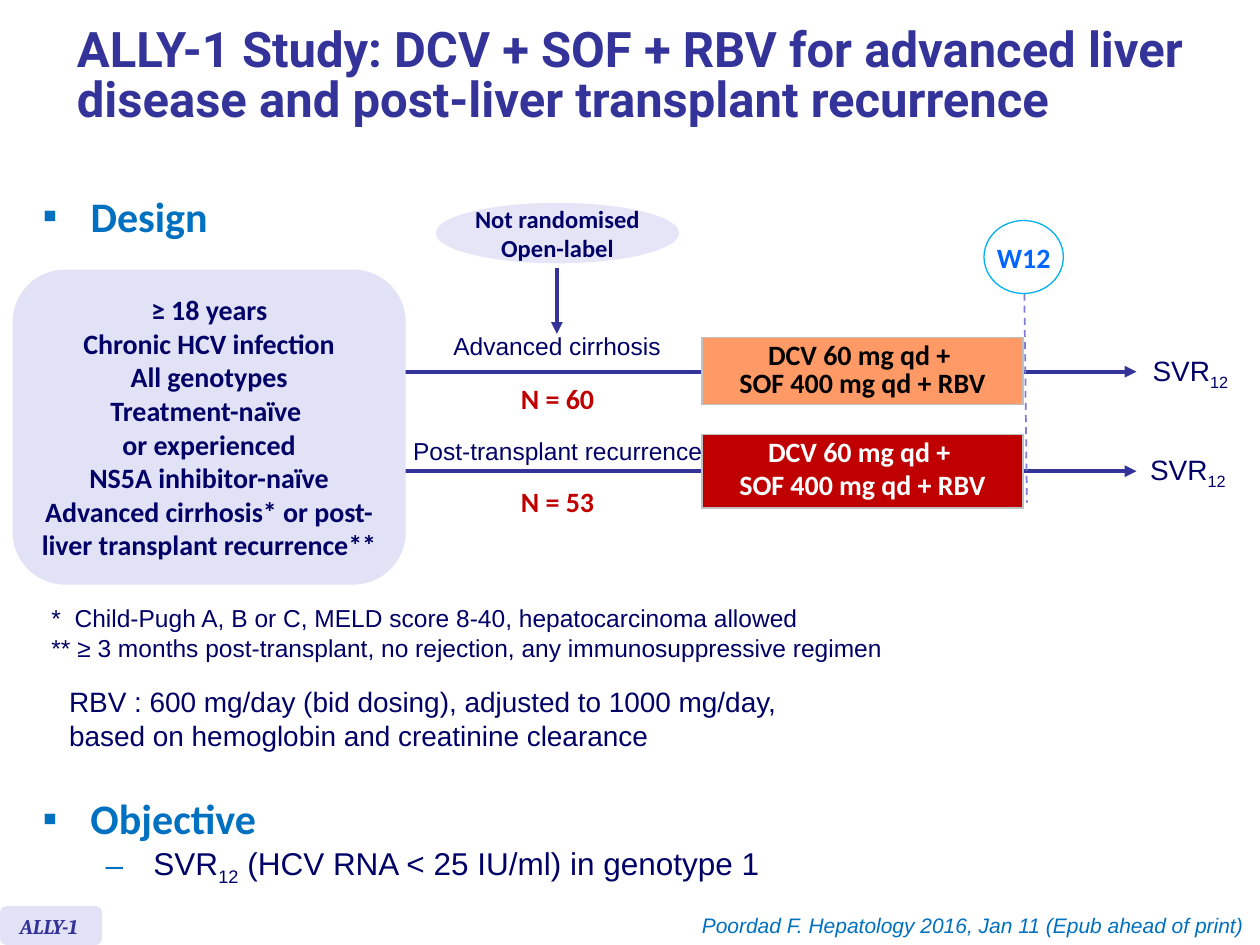
from lxml.etree import SubElement
from pptx import Presentation
from pptx.dml.color import RGBColor
from pptx.enum.dml import MSO_LINE
from pptx.enum.shapes import MSO_CONNECTOR, MSO_SHAPE
from pptx.enum.text import MSO_ANCHOR, PP_ALIGN
from pptx.oxml.ns import qn
from pptx.util import Inches, Pt

INDIGO = RGBColor(0x33, 0x33, 0x99)
NAVY = RGBColor(0x00, 0x00, 0x66)
BLUE = RGBColor(0x00, 0x70, 0xC0)
BRIGHT = RGBColor(0x00, 0x66, 0xFF)
CYAN = RGBColor(0x00, 0xB0, 0xF0)
DASH = RGBColor(0x7E, 0x7E, 0xD4)
LAVENDER = RGBColor(0xE2, 0xE2, 0xF6)
PALE = RGBColor(0xE5, 0xE5, 0xF7)
ORANGE = RGBColor(0xFF, 0x99, 0x66)
RED = RGBColor(0xC0, 0x00, 0x00)
BLACK = RGBColor(0, 0, 0)
WHITE = RGBColor(0xFF, 0xFF, 0xFF)

# Content: a line is a string, or a tuple whose every second part is subscript
TITLE = ("ALLY-1 Study: DCV + SOF + RBV for advanced liver disease "
         "and post-liver transplant recurrence")
SVR = ("SVR", "12")
CRITERIA = ["≥ 18 years", "Chronic HCV infection", "All genotypes",
            "Treatment-naïve ", "or experienced", "NS5A inhibitor-naïve",
            "Advanced cirrhosis* or post-", "liver transplant recurrence**"]
FOOTNOTES = ["*  Child-Pugh A, B or C, MELD score 8-40, hepatocarcinoma allowed",
             "** ≥ 3 months post-transplant, no rejection, any immunosuppressive regimen"]
DOSING = ["RBV : 600 mg/day (bid dosing), adjusted to 1000 mg/day,",
          "based on hemoglobin and creatinine clearance"]
OBJECTIVE = ("SVR", "12", " (HCV RNA < 25 IU/ml) in genotype 1")

ARMS = [
    dict(y=2.95, name="Advanced cirrhosis", name_at=(3.5, 2.58, 1.86, 0.34),
         size="N = 60", size_top=2.98, svr_at=(9.05, 2.76, 0.83, 0.37),
         drugs=["DCV 60 mg qd + \vSOF 400 mg qd + RBV"],
         top=2.68, height=0.53, fill=ORANGE, color=BLACK),
    dict(y=3.74, name="Post-transplant recurrence", name_at=(3.18, 3.41, 2.52, 0.34),
         size="N = 53", size_top=3.8, svr_at=(9.03, 3.54, 0.83, 0.37),
         drugs=["DCV 60 mg qd + ", "SOF 400 mg qd + RBV"],
         top=3.45, height=0.58, fill=RED, color=WHITE),
]

deck = Presentation()
deck.slide_width, deck.slide_height = Inches(10), Inches(7.5)
page = deck.slides.add_slide(deck.slide_layouts[5])


def set_font(para, size, color, face="Arial", bold=False, italic=False):
    font = para.font
    font.size, font.name, font.bold, font.italic = Pt(size), face, bold, italic
    font.color.rgb = color


def write(frame, lines, size, color, align=PP_ALIGN.LEFT, gap=0, **style):
    for index, line in enumerate(lines):
        para = frame.paragraphs[0] if index == 0 else frame.add_paragraph()
        para.alignment = align
        if index and gap:
            para.space_before = Pt(gap)
        if isinstance(line, str):
            para.text = line
        else:
            for part, text in enumerate(line):
                span = para.add_run()
                span.text = text
                if part % 2:
                    span.font._element.set("baseline", "-25000")
        set_font(para, size, color, **style)


def add_text(at, lines, size, color, wrap=False, **style):
    box = page.shapes.add_textbox(*map(Inches, at))
    box.text_frame.word_wrap = wrap
    write(box.text_frame, lines, size, color, **style)
    return box.text_frame


def add_panel(kind, at, fill, line=None):
    panel = page.shapes.add_shape(kind, *map(Inches, at))
    panel.shadow.inherit = False
    panel.fill.solid()
    panel.fill.fore_color.rgb = fill
    if line is None:
        panel.line.fill.background()
    else:
        panel.line.color.rgb = line
        panel.line.width = Pt(0.75)
    panel.text_frame.word_wrap = False
    panel.text_frame.vertical_anchor = MSO_ANCHOR.MIDDLE
    return panel


def add_line(x1, y1, x2, y2, color=INDIGO, width=2.25, arrow=True):
    line = page.shapes.add_connector(MSO_CONNECTOR.STRAIGHT,
                                     *map(Inches, (x1, y1, x2, y2)))
    line.line.color.rgb = color
    line.line.width = Pt(width)
    if arrow:
        SubElement(line.line._get_or_add_ln(), qn("a:tailEnd"), type="triangle")
    else:
        line.line.dash_style = MSO_LINE.DASH
    SubElement(line._element.spPr, qn("a:effectLst"))


def add_bullet(para, mark, left):
    props = para._p.get_or_add_pPr()
    props.set("marL", str(Inches(left)))
    props.set("indent", str(Inches(-0.38)))
    color = SubElement(props, qn("a:buClr"))
    SubElement(color, qn("a:srgbClr"), val=str(BLUE))
    SubElement(props, qn("a:buFont"), typeface="Arial")
    SubElement(props, qn("a:buChar"), char=mark)


def add_heading(at, heading, detail=None):
    box = page.shapes.add_textbox(*map(Inches, at))
    box.text_frame.word_wrap = True
    para = box.text_frame.paragraphs[0]
    add_bullet(para, "▪", 0.38)
    write(box.text_frame, [heading], 24, BLUE, face="Calibri", bold=True)
    if detail:
        para = box.text_frame.add_paragraph()
        para.level = 1
        add_bullet(para, "–", 0.88)
        para.space_before = Pt(0.7)
        for part, text in enumerate(detail):
            span = para.add_run()
            span.text = text
            if part % 2:
                span.font._element.set("baseline", "-25000")
        set_font(para, 18, NAVY)


def add_treatment(arm):
    at = (5.57, arm["top"], 2.55, arm["height"])
    table = page.shapes.add_table(1, 1, *map(Inches, at)).table
    table.first_row = table.horz_banding = False
    cell = table.cell(0, 0)
    cell.vertical_anchor = MSO_ANCHOR.MIDDLE
    write(cell.text_frame, arm["drugs"], 16, arm["color"], PP_ALIGN.CENTER,
          gap=3.2, face="Calibri", bold=True)
    for para in cell.text_frame.paragraphs:
        para.line_spacing = 0.8
    props = cell._tc.get_or_add_tcPr()
    for side in ("lnL", "lnR", "lnT", "lnB"):
        border = SubElement(props, qn("a:" + side), w=str(Pt(1)))
        SubElement(SubElement(border, qn("a:solidFill")), qn("a:srgbClr"), val="C0C0C0")
    cell.fill.solid()
    cell.fill.fore_color.rgb = arm["fill"]


# Title
title = page.shapes.title
title.left, title.top, title.width, title.height = map(Inches, (0.51, 0.08, 9.49, 1.07))
title.text_frame.word_wrap = True
title.text_frame.vertical_anchor = MSO_ANCHOR.MIDDLE
write(title.text_frame, [TITLE], 28, INDIGO, face="Roboto", bold=True)
title.text_frame.paragraphs[0].line_spacing = 0.85

# Headings
add_heading((0.24, 1.46, 1.98, 0.63), "Design")
add_heading((0.24, 6.24, 7.04, 0.81), "Objective", OBJECTIVE)

# Study arms
for arm in ARMS:
    add_line(3.19, arm["y"], 9.02, arm["y"])
    add_treatment(arm)
    add_text(arm["name_at"], [arm["name"]], 14, NAVY)
    add_text((4.03, arm["size_top"], 0.79, 0.37), [arm["size"]], 16, RED,
             align=PP_ALIGN.CENTER, face="Calibri", bold=True)
    add_text(arm["svr_at"], [SVR], 16, NAVY)

# Inclusion criteria
criteria = add_panel(MSO_SHAPE.ROUNDED_RECTANGLE, (0.1, 2.14, 3.12, 2.5), LAVENDER)
write(criteria.text_frame, CRITERIA, 16, NAVY, PP_ALIGN.CENTER, face="Calibri", bold=True)

# Allocation
allocation = add_panel(MSO_SHAPE.OVAL, (3.46, 1.61, 1.93, 0.48), PALE)
frame = allocation.text_frame
frame.margin_left = frame.margin_right = frame.margin_top = frame.margin_bottom = 0
write(frame, ["Not randomised", "Open-label"], 14, NAVY, PP_ALIGN.CENTER,
      face="Calibri", bold=True)
add_line(4.42, 2.13, 4.42, 2.65)

# Week 12 marker
add_line(8.13, 2.33, 8.15, 3.99, DASH, 1, arrow=False)
week = add_panel(MSO_SHAPE.OVAL, (7.81, 1.75, 0.63, 0.58), WHITE, CYAN)
write(week.text_frame, ["W12"], 16, BRIGHT, PP_ALIGN.CENTER, face="Calibri", bold=True)

# Notes under the diagram
add_text((0.31, 4.74, 6.83, 0.57), FOOTNOTES, 14, NAVY)
add_text((0.45, 5.38, 6.05, 0.65), DOSING, 16, NAVY, wrap=True, gap=0.7)

# Footer
add_panel(MSO_SHAPE.ROUNDED_RECTANGLE, (0, 7.19, 0.81, 0.31), LAVENDER)
add_text((0.06, 7.2, 0.88, 0.3), ["ALLY-1"], 12, INDIGO, wrap=True,
         face="Cambria", bold=True, italic=True)
add_text((5.39, 7.19, 4.58, 0.3),
         ["Poordad F. Hepatology 2016, Jan 11 (Epub ahead of print)"], 12, BLUE,
         wrap=True, align=PP_ALIGN.RIGHT, italic=True)

deck.save("out.pptx")
